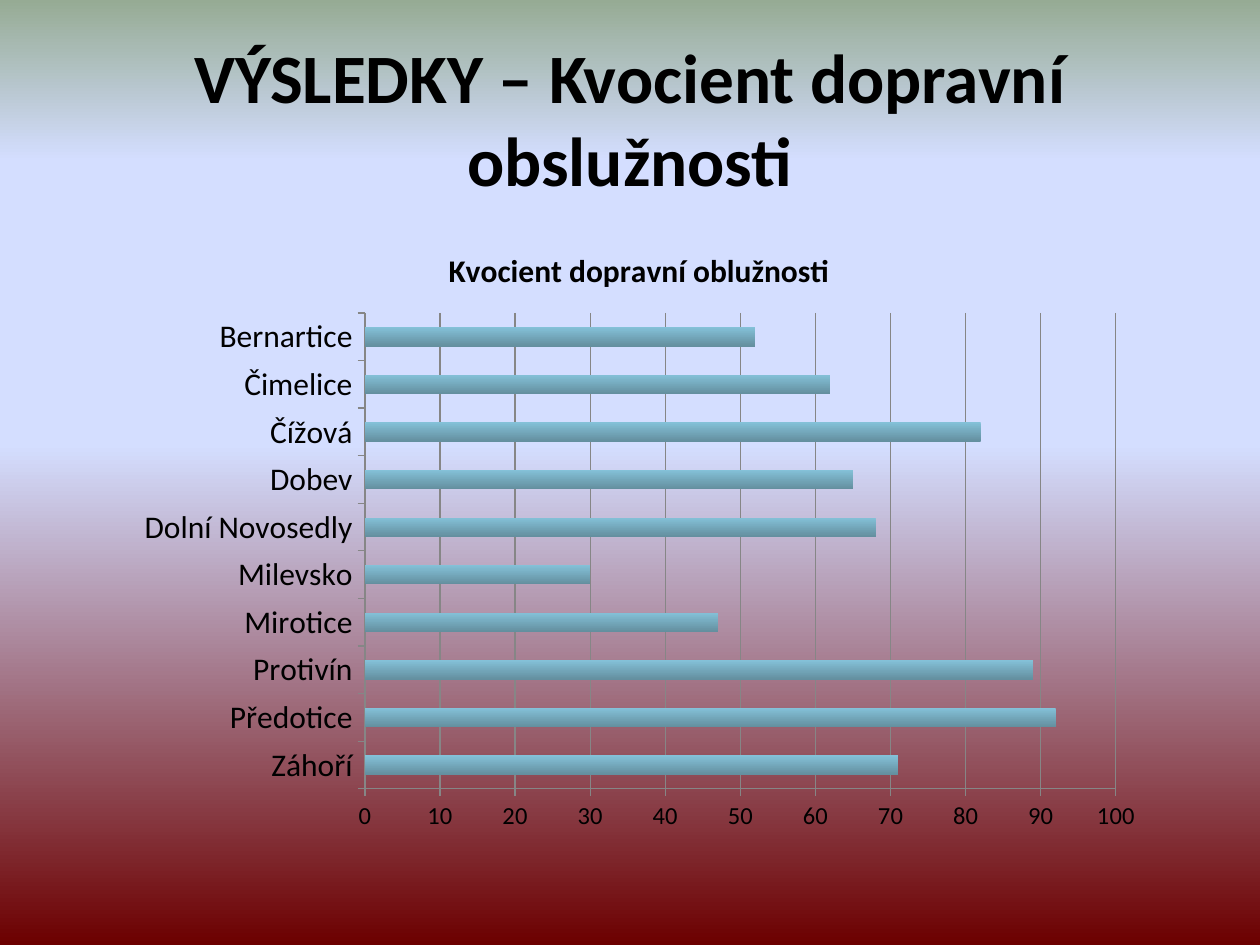
from lxml import etree
from pptx import Presentation
from pptx import util as u
from pptx.chart.data import CategoryChartData
from pptx.dml.color import RGBColor
from pptx.enum import chart as ch, text
from pptx.oxml import parse_xml
from pptx.oxml.ns import nsdecls, qn

PX = 914400 // 126
FONT = "Calibri"
TITLE = "VÝSLEDKY – Kvocient dopravní obslužnosti"
CHART_TITLE = "Kvocient dopravní oblužnosti"
VALUES = [
    ("Záhoří", 71), ("Předotice", 92), ("Protivín", 89), ("Mirotice", 47),
    ("Milevsko", 30), ("Dolní Novosedly", 68), ("Dobev", 65),
    ("Čížová", 82), ("Čimelice", 62), ("Bernartice", 52),
]
BACKGROUND = [(0, "6C0000"), (53, "D4DEFF"), (83, "D4DEFF"), (100, "96AB94")]
BAR_COLORS = ["84C1D8", "648F9F"]
GRID = "868686"
TITLE_BOX = (63, 38, 1134, 158)
CHART_BOX = (123, 224, 1032, 620)
PLOT_BOX = (365, 313, 751, 476)


def rgb(value):
    return RGBColor.from_string(value)


def style(font, size, bold=False):
    for name, value in dict(name=FONT, size=u.Pt(size), bold=bold).items():
        setattr(font, name, value)
    font.color.rgb = rgb("000000")


def paint_background(slide):
    fill = slide.background.fill
    fill.gradient()
    fill.gradient_angle = 90
    stops = slide.element.find(".//" + qn("a:gsLst"))
    for stop in list(stops):
        stops.remove(stop)
    for position, color in BACKGROUND:
        stop = etree.SubElement(stops, qn("a:gs"), pos=str(position * 1000))
        etree.SubElement(stop, qn("a:srgbClr"), val=color)


def place_plot(chart):
    """Fix the inner plot area as fractions of the chart frame."""
    left, top, width, height = CHART_BOX
    x, y, w, h = PLOT_BOX
    parts = [("layoutTarget", "inner"), ("xMode", "edge"), ("yMode", "edge"),
             ("x", (x - left) / width), ("y", (y - top) / height),
             ("w", w / width), ("h", h / height)]
    layout = parse_xml(f"<c:layout {nsdecls('c')}/>")
    manual = etree.SubElement(layout, qn("c:manualLayout"))
    for name, value in parts:
        etree.SubElement(manual, qn("c:" + name), val=str(value))
    area = chart.element.find(".//" + qn("c:plotArea"))
    for old in area.findall(qn("c:layout")):
        area.remove(old)
    area.insert(0, layout)


prs = Presentation()
prs.slide_width, prs.slide_height = u.Inches(10), u.Inches(7.5)
slide = prs.slides.add_slide(prs.slide_layouts[5])
paint_background(slide)

title = slide.shapes.title
for name, value in zip(("left", "top", "width", "height"), TITLE_BOX):
    setattr(title, name, value * PX)
tf = title.text_frame
tf.text = TITLE
tf.word_wrap = True
tf.vertical_anchor = text.MSO_ANCHOR.MIDDLE
p = tf.paragraphs[0]
p.alignment = text.PP_ALIGN.CENTER
style(p.runs[0].font, 39.6, True)

data = CategoryChartData()
data.categories = [name for name, _ in VALUES]
data.add_series(CHART_TITLE, [value for _, value in VALUES])
chart = slide.shapes.add_chart(
    ch.XL_CHART_TYPE.BAR_CLUSTERED, *(v * PX for v in CHART_BOX), data).chart
style(chart.font, 10)
chart.has_legend = False
chart.has_title = True
chart.chart_title.include_in_layout = False
p = chart.chart_title.text_frame.paragraphs[0]
r = p.add_run()
r.text = CHART_TITLE
style(r.font, 18, True)
place_plot(chart)

plot = chart.plots[0]
plot.vary_by_categories = False
plot.gap_width = 150
fill = plot.series[0].format.fill
fill.gradient()
fill.gradient_angle = 270
for stop, color in zip(fill.gradient_stops, BAR_COLORS):
    stop.color.rgb = rgb(color)

for axis, size in ((chart.category_axis, 18), (chart.value_axis, 14)):
    style(axis.tick_labels.font, size)
    axis.major_tick_mark = ch.XL_TICK_MARK.OUTSIDE
    axis.format.line.color.rgb = rgb(GRID)
axis = chart.value_axis
for name, value in dict(minimum_scale=0, maximum_scale=100, major_unit=10,
                        has_major_gridlines=True).items():
    setattr(axis, name, value)
axis.major_gridlines.format.line.color.rgb = rgb(GRID)

prs.save("out.pptx")
